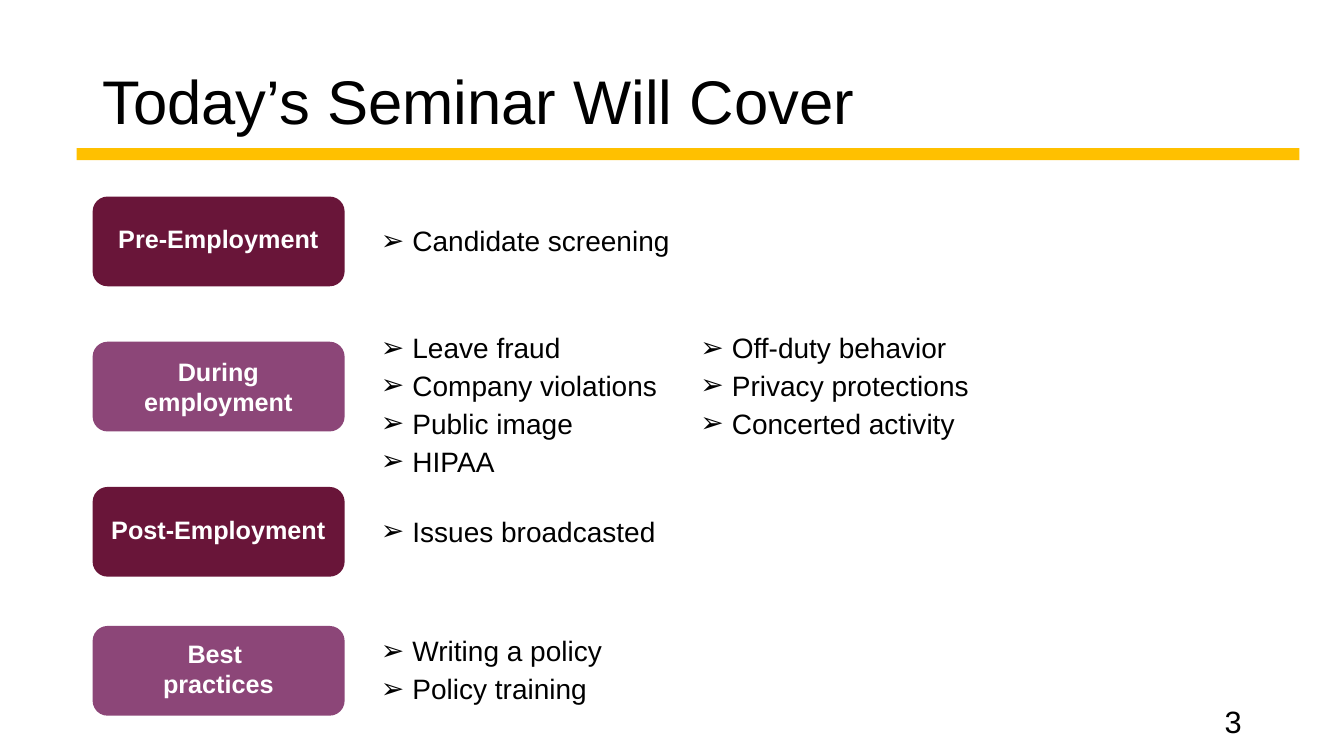
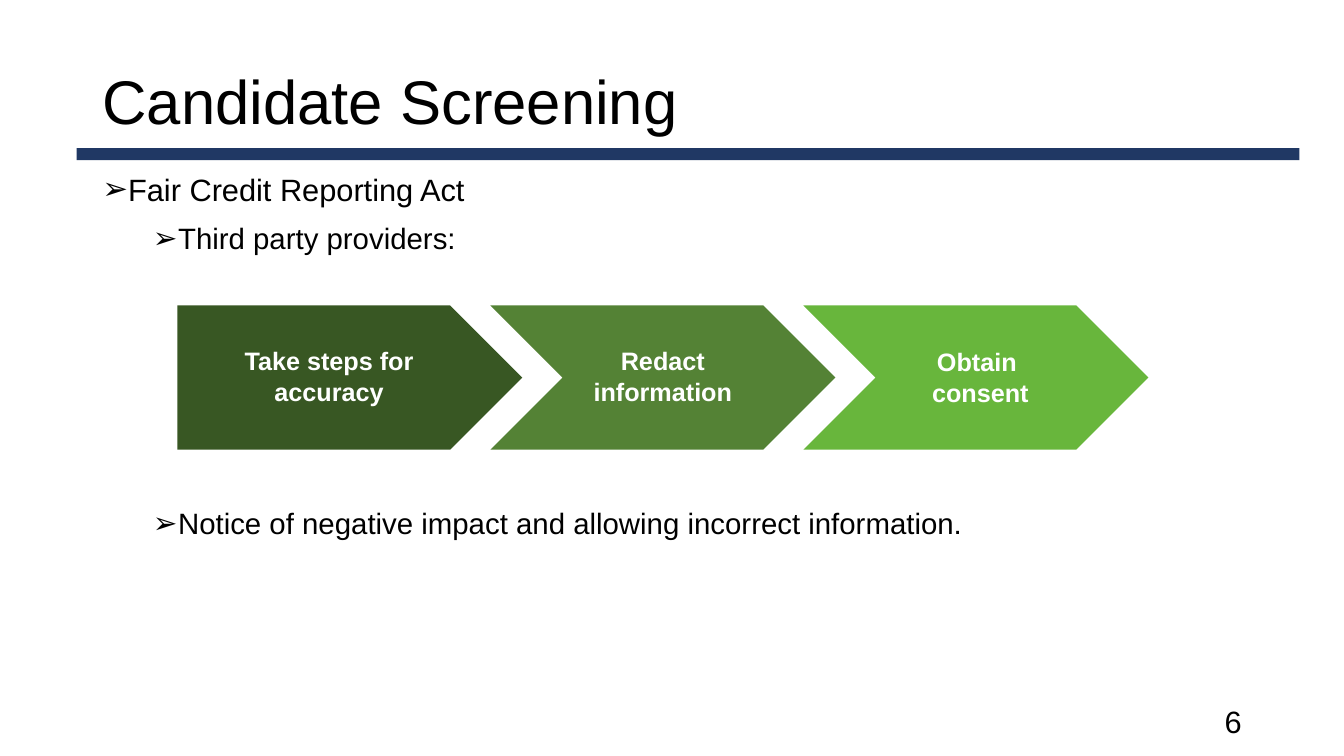
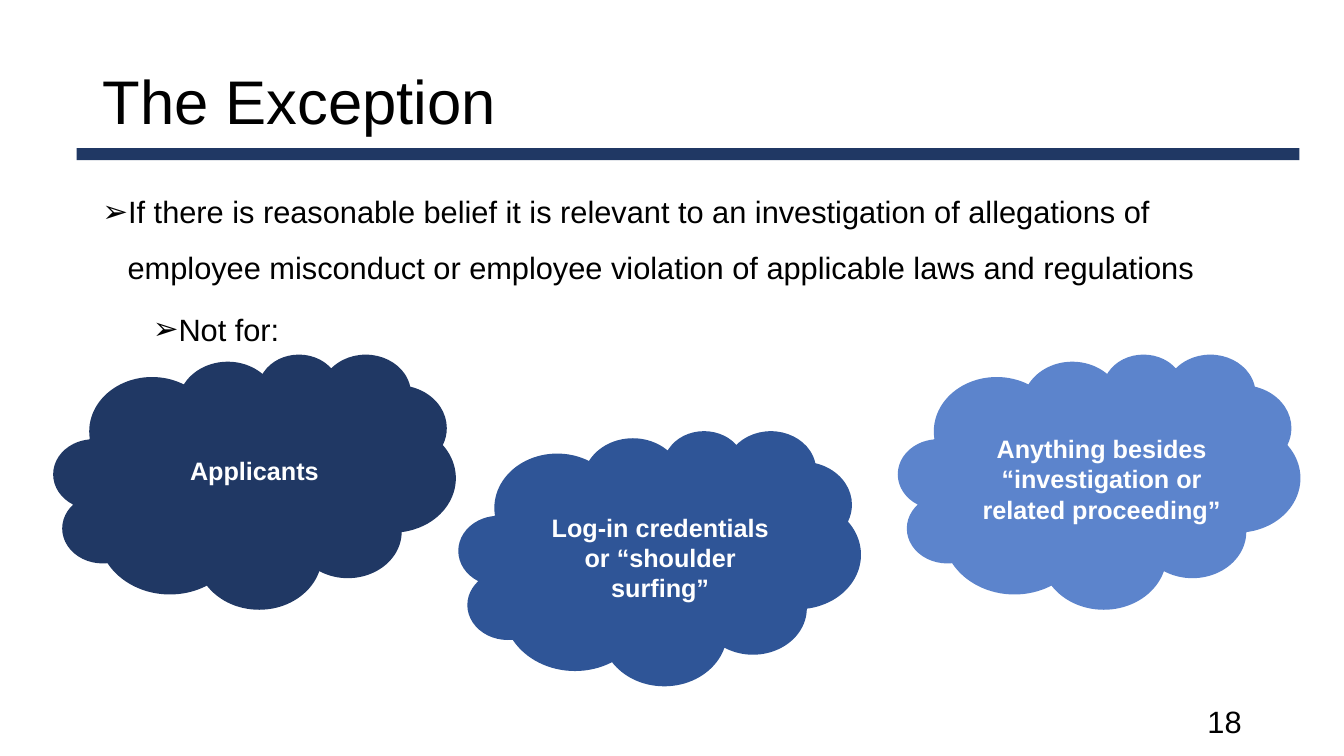
"""Build three seminar slides on employee screening and privacy."""
from lxml import etree
from pptx import Presentation
from pptx.dml.color import RGBColor
from pptx.enum.shapes import MSO_SHAPE as Shape
from pptx.enum.text import MSO_ANCHOR as Anchor, MSO_AUTO_SIZE as AutoSize, PP_ALIGN as Align
from pptx.oxml.ns import qn
from pptx.util import Pt

COLORS = {
    "black": "000000", "white": "FFFFFF", "gold": "FFC000", "navy": "203864",
    "maroon": "691539", "plum": "8C4678",
    "dark green": "385723", "green": "548235", "light green": "68B63C",
    "blue": "2F5597", "light blue": "5C84CC",
}
FONT = "Arial"
TITLE_ONLY, TITLE_AND_BODY = 5, 1


class Seminar:
    def __init__(self):
        self.deck = Presentation()
        self.deck.slide_width, self.deck.slide_height = Pt(960), Pt(540)
        self.page = None

    def place(self, item, left, top, width, height):
        item.left, item.top, item.width, item.height = Pt(left), Pt(top), Pt(width), Pt(height)

    def format(self, para, size, color="black", bold=False):
        for span in para.runs:
            span.font.name = FONT
            span.font.size = Pt(size)
            span.font.bold = bold
            span.font.color.rgb = RGBColor.from_string(COLORS[color])

    def bullet(self, para, indent, hang):
        props = para._p.get_or_add_pPr()
        props.set("marL", str(Pt(indent)))
        props.set("indent", str(-Pt(hang)))
        etree.SubElement(props, qn("a:buFont")).set("typeface", FONT)
        etree.SubElement(props, qn("a:buChar")).set("char", "➢")

    def start(self, title, number, bar_color, layout=TITLE_ONLY):
        self.page = self.deck.slides.add_slide(self.deck.slide_layouts[layout])
        heading = self.page.shapes.title
        self.place(heading, 66, 29, 828, 92)
        frame = heading.text_frame
        frame.text = title
        frame.auto_size = AutoSize.NONE
        frame.vertical_anchor = Anchor.MIDDLE
        para = frame.paragraphs[0]
        para.alignment = Align.LEFT
        para.line_spacing = 0.9
        self.format(para, 44)
        self.shape(Shape.RECTANGLE, bar_color, 54.7, 105.8, 873.4, 8.6)
        footer = self.text(str(number), 678, 500.4, 216, 28.8, 22, Align.RIGHT)
        footer.text_frame.vertical_anchor = Anchor.MIDDLE

    def shape(self, kind, color, left, top, width, height):
        item = self.page.shapes.add_shape(kind, Pt(left), Pt(top), Pt(width), Pt(height))
        item.shadow.inherit = False
        item.fill.solid()
        item.fill.fore_color.rgb = RGBColor.from_string(COLORS[color])
        item.line.fill.background()

    def text(self, words, left, top, width, height, size, align, color="black", bold=False):
        box = self.page.shapes.add_textbox(Pt(left), Pt(top), Pt(width), Pt(height))
        frame = box.text_frame
        frame.word_wrap = True
        frame.text = words
        for para in frame.paragraphs:
            para.alignment = align
            self.format(para, size, color, bold)
        return box

    def label(self, words, left, top, width, height):
        self.text(words, left, top, width, height, 18, Align.CENTER, "white", True)

    def topics(self, lines, left, top):
        height = 7 + 27 * len(lines)
        box = self.text("\n".join(lines), left, top, 299, height, 20, Align.LEFT)
        for para in box.text_frame.paragraphs:
            para.space_after = Pt(3)
            self.bullet(para, 22.5, 22.5)

    def body(self, items, line_spacing, after):
        holder = self.page.placeholders[1]
        self.place(holder, 66, 121, 828, 369)
        frame = holder.text_frame
        frame.auto_size = AutoSize.NONE
        frame.text = "\n".join(words for words, *_ in items)
        for para, (_, level, size, before) in zip(frame.paragraphs, items):
            para.level = level
            para.line_spacing = line_spacing
            para.space_before = Pt(before)
            para.space_after = Pt(after)
            self.bullet(para, 18 + 36 * level, 18)
            self.format(para, size)


def cover(seminar):
    seminar.start("Today’s Seminar Will Cover", 3, "gold")
    rows = [
        ("Pre-Employment", "maroon", 140.4, 156.2, 29, 156.2, ["Candidate screening"]),
        ("During employment", "plum", 244.1, 250.6, 51, 232.6,
         ["Leave fraud", "Company violations", "Public image", "HIPAA"]),
        ("Post-Employment", "maroon", 347.8, 363.6, 29, 363.6, ["Issues broadcasted"]),
        ("Best \npractices", "plum", 447.1, 452.2, 51, 449.3,
         ["Writing a policy", "Policy training"]),
    ]
    for name, color, top, label_top, label_height, topics_top, lines in rows:
        seminar.shape(Shape.ROUNDED_RECTANGLE, color, 66.2, top, 180, 64.1)
        seminar.label(name, 70, label_top, 172, label_height)
        seminar.topics(lines, 265, topics_top)
    seminar.topics(["Off-duty behavior", "Privacy protections", "Concerted activity"], 493.2, 232.6)


def screening(seminar):
    seminar.start("Candidate Screening", 6, "navy", TITLE_AND_BODY)
    seminar.body([
        ("Fair Credit Reporting Act", 0, 22, 6),
        ("Third party providers:", 1, 21, 6),
        ("Notice of negative impact and allowing incorrect information.", 1, 21, 174.4),
    ], 0.9, 6)
    steps = [
        ("Take steps for accuracy", Shape.PENTAGON, "dark green", 156.2, 243.4),
        ("Redact information", Shape.CHEVRON, "green", 394.6, 243.4),
        ("Obtain \nconsent", Shape.CHEVRON, "light green", 621.4, 244.1),
    ]
    for index, (name, kind, color, left, top) in enumerate(steps):
        seminar.shape(kind, color, 126.7 + 223.6 * index, 218.2, 246.4, 103)
        seminar.label(name, left, top, 157.7, 51)


def exception(seminar):
    seminar.start("The Exception", 18, "navy", TITLE_AND_BODY)
    seminar.body([
        ("If there is reasonable belief it is relevant to an investigation of allegations of "
         "employee misconduct or employee violation of applicable laws and regulations", 0, 22, 10),
        ("Not for:", 1, 22, 5),
    ], 1.5, 0)
    clouds = [
        ("Applicants", "navy", 38.2, 252.7, (102.2, 321.8, 159.1, 29)),
        ("Log-in credentials or “shoulder surfing”", "blue", 327.6, 307.4,
         (377.3, 362.2, 188.6, 73)),
        ("Anything besides “investigation or related proceeding”", "light blue", 641.5, 252.7,
         (692.6, 306, 188.6, 73)),
    ]
    for name, color, left, top, label_area in clouds:
        seminar.shape(Shape.CLOUD, color, left, top, 287.3, 182.2)
        seminar.label(name, *label_area)


def main():
    seminar = Seminar()
    for build in (cover, screening, exception):
        build(seminar)
    seminar.deck.save("out.pptx")


if __name__ == "__main__":
    main()
